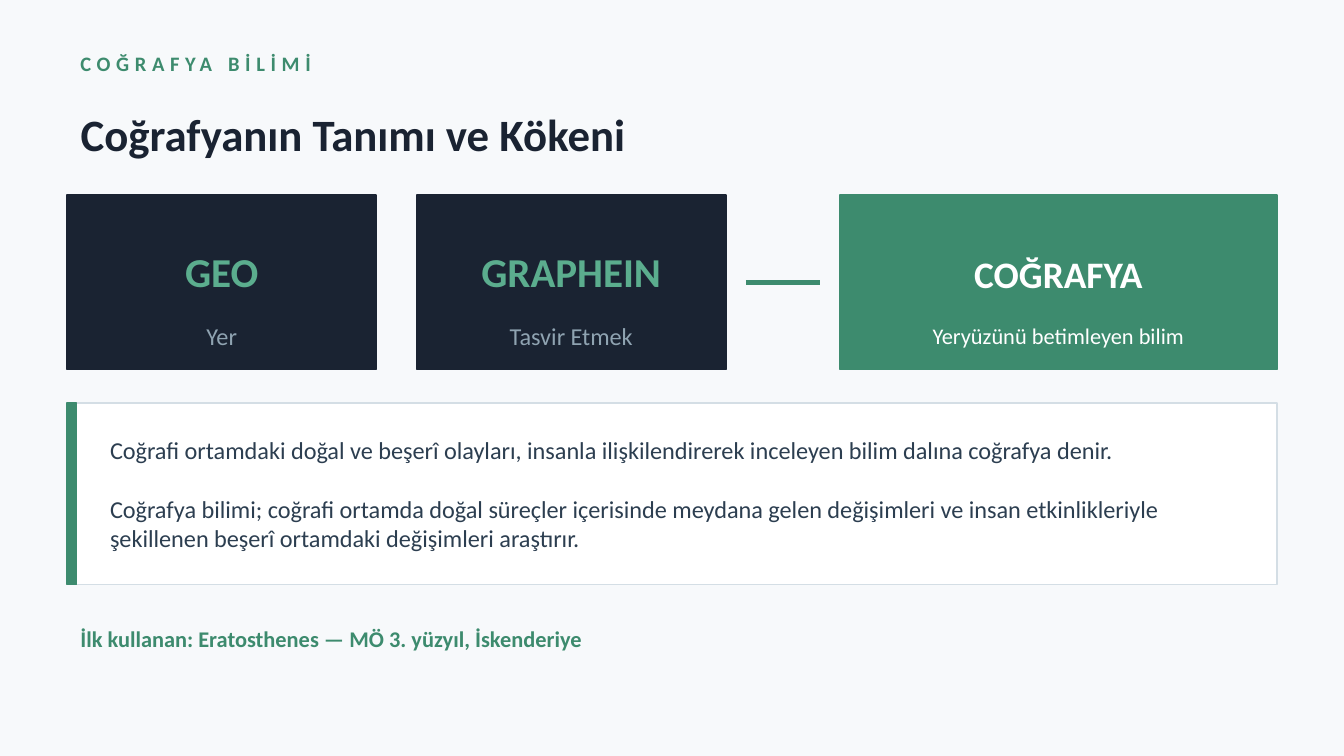
"""Build the slide on the definition and origin of geography."""
from lxml.etree import SubElement
from pptx import Presentation
from pptx.dml.color import RGBColor
from pptx.enum.shapes import MSO_CONNECTOR, MSO_SHAPE
from pptx.enum.text import MSO_ANCHOR, MSO_AUTO_SIZE, PP_ALIGN
from pptx.oxml.ns import qn
from pptx.util import Pt

PX = 4572
GREEN, NAVY, MINT = "3D8B6E", "1A2332", "5BAD8E"
GREY, SLATE, WHITE = "8FA3B1", "2C3E50", "FFFFFF"
color = RGBColor.from_string


def add_panel(left, top, width, height, fill, outline):
    panel = slide.shapes.add_shape(
        MSO_SHAPE.RECTANGLE, left * PX, top * PX, width * PX, height * PX)
    panel.shadow.inherit = False
    panel.fill.solid()
    panel.fill.fore_color.rgb = color(fill)
    panel.line.color.rgb = color(outline)
    panel.line.width = Pt(1)


def add_text(left, top, width, height, text, size, ink, bold=False,
             align=PP_ALIGN.LEFT, anchor=MSO_ANCHOR.MIDDLE, box=None):
    box = box or slide.shapes.add_textbox(0, 0, 0, 0)
    box.left, box.top = left * PX, top * PX
    box.width, box.height = width * PX, height * PX
    frame = box.text_frame
    frame.text = text
    frame.word_wrap = True
    frame.auto_size = MSO_AUTO_SIZE.NONE
    frame.vertical_anchor = anchor
    for para in frame.paragraphs:
        para.alignment = align
        para.font.name = "Calibri"
        para.font.size = Pt(size)
        para.font.bold = bold
        para.font.color.rgb = color(ink)
    return frame


deck = Presentation()
deck.slide_width, deck.slide_height = 2000 * PX, 1125 * PX
slide = deck.slides.add_slide(deck.slide_layouts[5])
slide.background.fill.solid()
slide.background.fill.fore_color.rgb = color("F7F9FB")

label = add_text(100, 56, 1800, 76, "COĞRAFYA BİLİMİ", 11, GREEN, True)
label.paragraphs[0].runs[0]._r.get_or_add_rPr().set("spc", "300")
add_text(100, 144, 1800, 110, "Coğrafyanın Tanımı ve Kökeni", 24, NAVY, True,
         box=slide.shapes.title)

cards = [
    (100, 460, NAVY, "GEO", 22, MINT, "Yer", 13, GREY),
    (620, 460, NAVY, "GRAPHEIN", 22, MINT, "Tasvir Etmek", 13, GREY),
    (1250, 650, GREEN, "COĞRAFYA", 20, WHITE, "Yeryüzünü betimleyen bilim", 12, WHITE),
]
for left, width, fill, word, word_size, word_ink, meaning, size, ink in cards:
    add_panel(left, 290, width, 260, fill, fill)
    add_text(left, 290, width, 160, word, word_size, word_ink, True,
             PP_ALIGN.CENTER, MSO_ANCHOR.BOTTOM)
    add_text(left, 450, width, 100, meaning, size, ink, align=PP_ALIGN.CENTER)

link = slide.shapes.add_connector(
    MSO_CONNECTOR.STRAIGHT, 1110 * PX, 420 * PX, 1220 * PX, 420 * PX)
link.line.color.rgb = color(GREEN)
link.line.width = Pt(2.5)
SubElement(link._element.spPr, qn("a:effectLst"))

add_panel(100, 600, 1800, 270, WHITE, "D4DEE5")
add_panel(100, 600, 14, 270, GREEN, GREEN)
definition = add_text(
    144, 600, 1730, 270,
    "Coğrafi ortamdaki doğal ve beşerî olayları, insanla ilişkilendirerek "
    "inceleyen bilim dalına coğrafya denir.\n"
    "Coğrafya bilimi; coğrafi ortamda doğal süreçler içerisinde meydana gelen "
    "değişimleri ve insan etkinlikleriyle şekillenen beşerî ortamdaki "
    "değişimleri araştırır.", 13, SLATE)
definition.paragraphs[1].space_before = Pt(16)

add_text(100, 910, 1800, 80,
         "İlk kullanan: Eratosthenes — MÖ 3. yüzyıl, İskenderiye", 12, GREEN, True)

deck.save("out.pptx")
